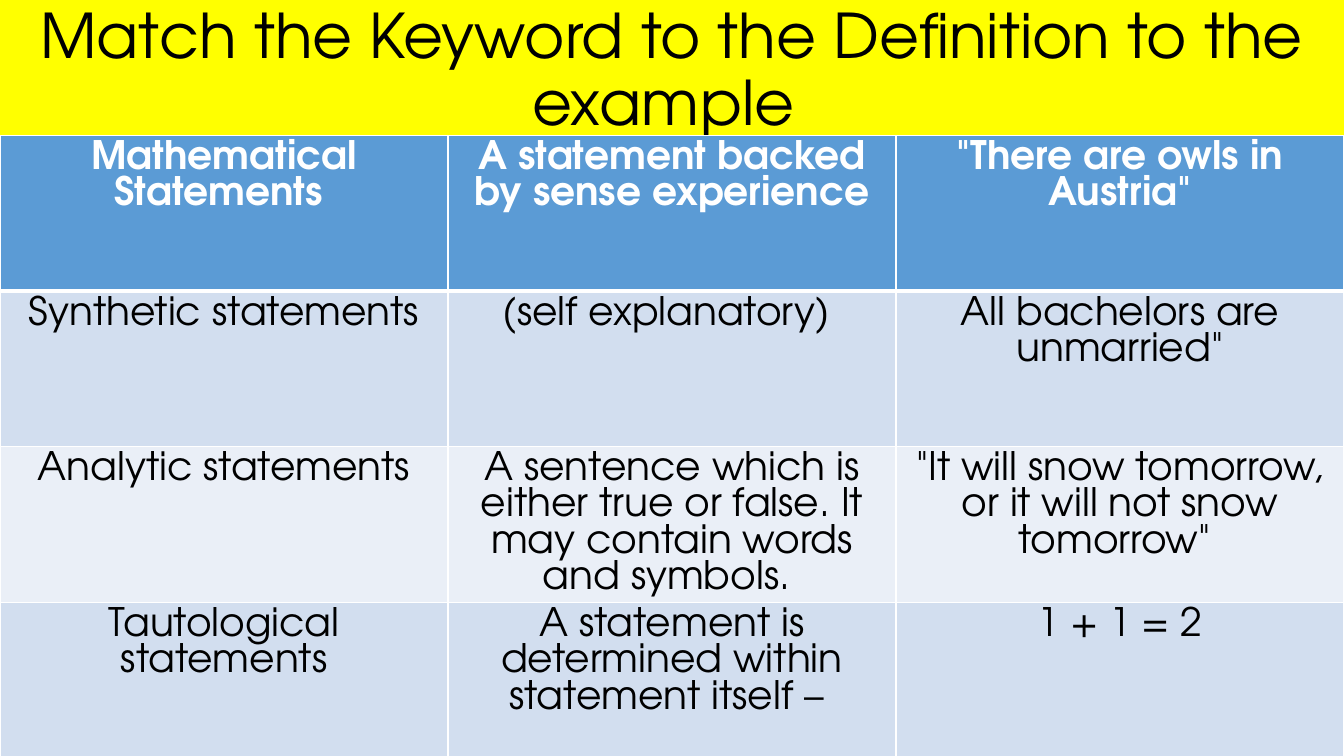
from dataclasses import dataclass

from lxml import etree
from pptx import Presentation
from pptx.dml.color import RGBColor
from pptx.enum.text import MSO_ANCHOR, MSO_AUTO_SIZE, PP_ALIGN
from pptx.oxml.ns import qn
from pptx.util import Pt

CENTER = PP_ALIGN.CENTER
MIDDLE = MSO_ANCHOR.MIDDLE
NO_AUTOFIT = MSO_AUTO_SIZE.NONE
PX = 6350  # EMU per px, 144 px to the inch


@dataclass(frozen=True)
class Theme:
    font: str = "TeX Gyre Adventor"
    title_size: int = 44
    cell_size: int = 28
    banner: str = "FFFF00"
    ink: str = "000000"
    header_ink: str = "FFFFFF"
    header: str = "5B9BD5"
    bands: tuple = ("EAEFF7", "D2DEEF")
    border: str = "FFFFFF"


THEME = Theme()
SLIDE_WIDTH, SLIDE_HEIGHT = 1920, 1080
TITLE_HEIGHT = 206
TABLE_TOP, ROW_HEIGHT = 194, 222

ROWS = [
    ("Mathematical Statements ", "A statement backed by sense experience",
     '"There are owls in Austria"'),
    ("Synthetic statements", "(self explanatory) ", 'All bachelors are unmarried"'),
    ("Analytic statements",
     "A sentence which is either true or false. It may contain words and symbols. ",
     '"It will snow tomorrow, or it will not snow tomorrow" '),
    ("Tautological statements", "A statement is determined within statement itself – ",
     "1 + 1 = 2"),
]


def write(frame, text, size, color, bold, spacing):
    frame.text = text
    para = frame.paragraphs[0]
    para.alignment = CENTER
    para.line_spacing = spacing
    para.font.name = THEME.font
    para.font.size = Pt(size)
    para.font.bold = bold
    para.font.color.rgb = RGBColor.from_string(color)


def paint(target, color):
    target.fill.solid()
    target.fill.fore_color.rgb = RGBColor.from_string(color)


deck = Presentation()
deck.slide_width, deck.slide_height = SLIDE_WIDTH * PX, SLIDE_HEIGHT * PX
page = deck.slides.add_slide(deck.slide_layouts[5])

# Title banner
title = page.shapes.title
title.left, title.top = 0, 0
title.width, title.height = SLIDE_WIDTH * PX, TITLE_HEIGHT * PX
paint(title, THEME.banner)
title.text_frame.auto_size = NO_AUTOFIT
title.text_frame.vertical_anchor = MIDDLE
write(title.text_frame, "Match the Keyword to the Definition to the example ",
      THEME.title_size, THEME.ink, False, 0.9)

# Matching table: equal columns and rows, header over alternating bands
table = page.shapes.add_table(
    len(ROWS), len(ROWS[0]), 0, TABLE_TOP * PX,
    SLIDE_WIDTH * PX, ROW_HEIGHT * len(ROWS) * PX).table
for row_index, texts in enumerate(ROWS):
    is_header = row_index == 0
    fill = THEME.header if is_header else THEME.bands[row_index % 2]
    ink = THEME.header_ink if is_header else THEME.ink
    # Thin borders, with a thick line between header and body
    widths = {"a:lnL": 1, "a:lnR": 1,
              "a:lnT": 3 if row_index == 1 else 1, "a:lnB": 3 if is_header else 1}
    for column_index, text in enumerate(texts):
        cell = table.cell(row_index, column_index)
        write(cell.text_frame, text, THEME.cell_size, ink, is_header, 1.0)
        properties = cell._tc.get_or_add_tcPr()
        for side, width in widths.items():
            line = etree.SubElement(properties, qn(side), w=str(Pt(width)))
            solid = etree.SubElement(line, qn("a:solidFill"))
            etree.SubElement(solid, qn("a:srgbClr"), val=THEME.border)
        paint(cell, fill)

deck.save("out.pptx")
